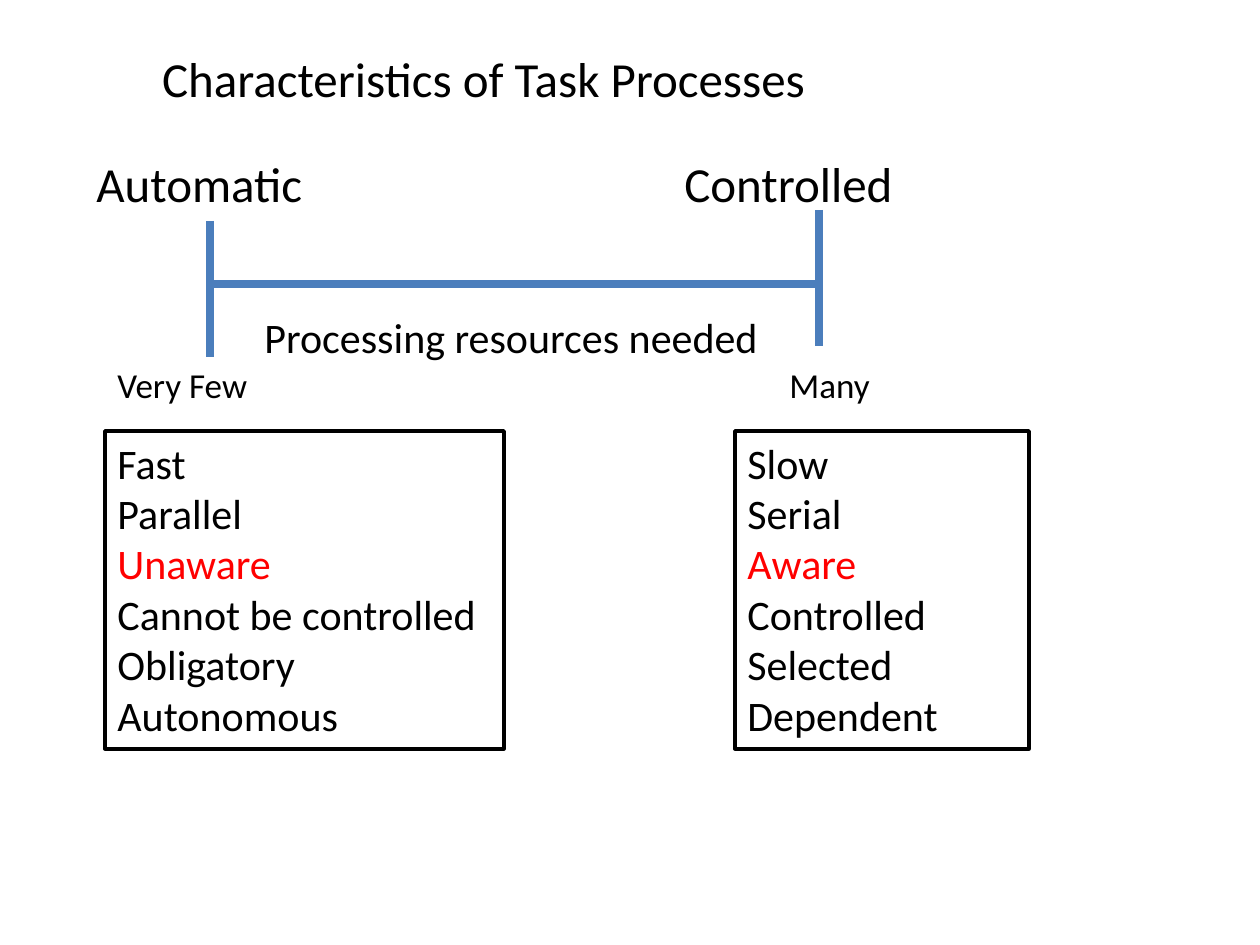
from dataclasses import dataclass

from lxml import etree
from pptx import Presentation
from pptx.dml.color import RGBColor
from pptx.enum.shapes import MSO_CONNECTOR, MSO_SHAPE
from pptx.enum.text import MSO_ANCHOR, MSO_AUTO_SIZE, PP_ALIGN
from pptx.oxml.ns import qn
from pptx.util import Emu, Pt

STRAIGHT = MSO_CONNECTOR.STRAIGHT
RECTANGLE = MSO_SHAPE.RECTANGLE
TOP = MSO_ANCHOR.TOP
GROW = MSO_AUTO_SIZE.SHAPE_TO_FIT_TEXT
LEFT, CENTER = PP_ALIGN.LEFT, PP_ALIGN.CENTER

PX_PER_INCH = 126
SLIDE_WIDTH, SLIDE_HEIGHT = 1260, 945


def px(length):
    return Emu(round(length * 914400 / PX_PER_INCH))


@dataclass(frozen=True)
class Theme:
    font: str = "Calibri"
    text: RGBColor = RGBColor(0, 0, 0)
    accent: RGBColor = RGBColor(0xFF, 0, 0)
    paper: RGBColor = RGBColor(0xFF, 0xFF, 0xFF)
    scale_line: RGBColor = RGBColor(0x4B, 0x7E, 0xBC)
    heading_size: float = 28
    body_size: float = 24
    label_size: float = 20
    scale_width: float = 4.5
    border_width: float = 2


class SlideBuilder:
    def __init__(self, slide, theme):
        self.slide = slide
        self.theme = theme

    def set_text(self, shape, lines, size, align=LEFT, highlight=None):
        frame = shape.text_frame
        frame.text = "\n".join(lines)
        frame.word_wrap = True
        frame.auto_size = GROW
        frame.vertical_anchor = TOP
        for paragraph in frame.paragraphs:
            paragraph.alignment = align
            for run in paragraph.runs:
                run.font.name = self.theme.font
                run.font.size = Pt(size)
                highlighted = run.text == highlight
                run.font.color.rgb = self.theme.accent if highlighted else self.theme.text

    def label(self, text, left, top, width, height, size, align=LEFT):
        box = self.slide.shapes.add_textbox(px(left), px(top), px(width), px(height))
        self.set_text(box, [text], size, align)

    def list_box(self, lines, left, top, width, height, highlight):
        box = self.slide.shapes.add_shape(
            RECTANGLE, px(left), px(top), px(width), px(height))
        box.shadow.inherit = False
        box.fill.solid()
        box.fill.fore_color.rgb = self.theme.paper
        box.line.color.rgb = self.theme.text
        box.line.width = Pt(self.theme.border_width)
        self.set_text(box, lines, self.theme.body_size, highlight=highlight)

    def line(self, x1, y1, x2, y2):
        connector = self.slide.shapes.add_connector(
            STRAIGHT, px(x1), px(y1), px(x2), px(y2))
        connector.line.color.rgb = self.theme.scale_line
        connector.line.width = Pt(self.theme.scale_width)
        etree.SubElement(connector.element.spPr, qn("a:effectLst"))


def main():
    presentation = Presentation()
    presentation.slide_width = px(SLIDE_WIDTH)
    presentation.slide_height = px(SLIDE_HEIGHT)
    slide = presentation.slides.add_slide(presentation.slide_layouts[6])
    theme = Theme()
    builder = SlideBuilder(slide, theme)

    # Scale between the two kinds of process
    automatic_x, controlled_x, scale_y, tick_height = 210, 819, 284, 136
    for x, top in ((automatic_x, 221), (controlled_x, 210)):
        builder.line(x, top, x, top + tick_height)
    builder.line(automatic_x, scale_y, controlled_x, scale_y)

    # Headings above the scale ends
    for text, left, width in (("Automatic", 84, 294), ("Controlled", 672, 315)):
        builder.label(text, left, 147, width, 72, theme.heading_size)

    # Characteristics of each process
    columns = (
        (105, 399, "Unaware", ["Fast", "Parallel", "Unaware",
                               "Cannot be controlled", "Obligatory", "Autonomous"]),
        (735, 294, "Aware", ["Slow", "Serial", "Aware",
                             "Controlled", "Selected", "Dependent"]),
    )
    for left, width, highlight, lines in columns:
        builder.list_box(lines, left, 431, width, 318, highlight)

    # Title and scale captions
    builder.label("Characteristics of Task Processes ", 32, 42, 914, 72,
                  theme.heading_size, CENTER)
    builder.label("Processing resources needed", 252, 305, 536, 63, theme.body_size)
    for text, left, width in (("Very Few", 105, 158), ("Many", 777, 116)):
        builder.label(text, left, 357, width, 55, theme.label_size)

    presentation.save("out.pptx")


if __name__ == "__main__":
    main()
